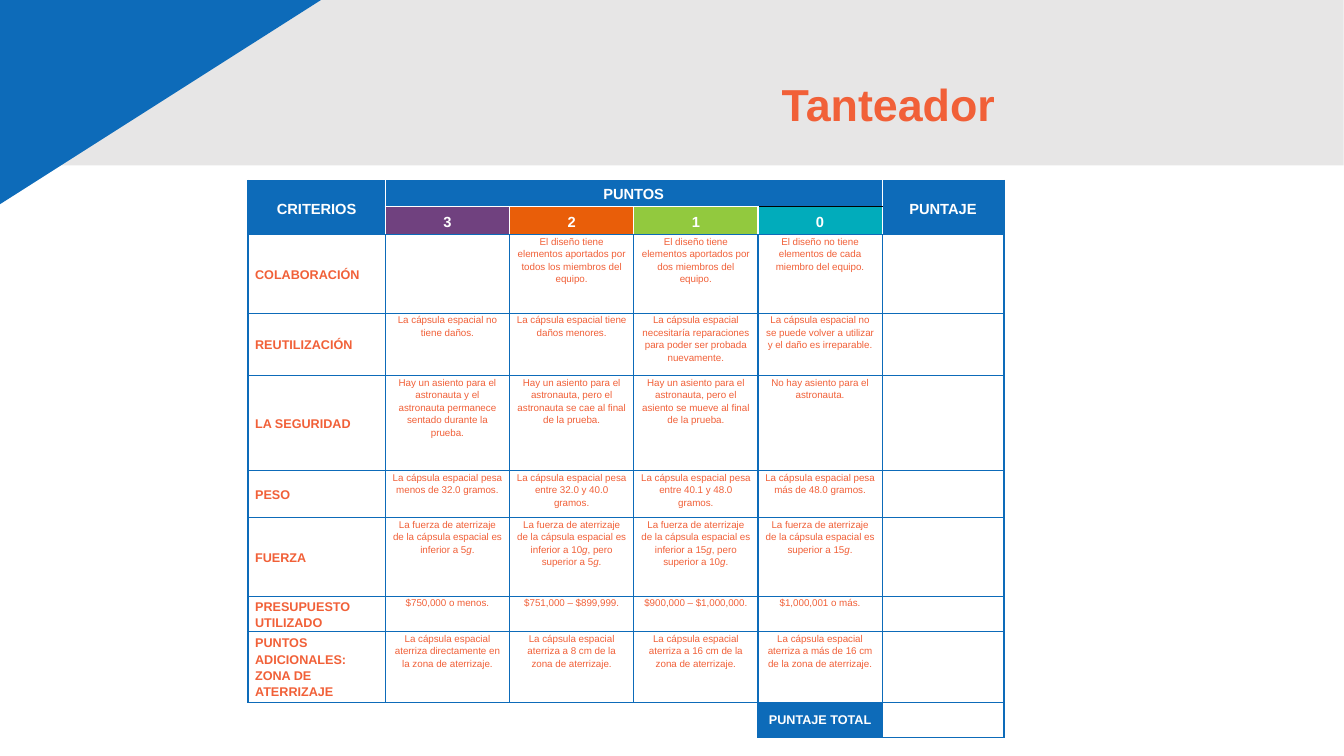
"""Build the scoring rubric slide."""
import lxml.etree
import pptx
import pptx.dml.color
import pptx.enum.shapes
import pptx.enum.text
import pptx.oxml
import pptx.oxml.ns
import pptx.util

Cm, Pt = pptx.util.Cm, pptx.util.Pt
RGB = pptx.dml.color.RGBColor
ALIGN = pptx.enum.text.PP_ALIGN
MIDDLE = pptx.enum.text.MSO_ANCHOR.MIDDLE
TOP = pptx.enum.text.MSO_ANCHOR.TOP
SHAPE = pptx.enum.shapes.MSO_SHAPE

BLUE = RGB(0x0D, 0x6B, 0xB9)
GREY = RGB(0xE7, 0xE6, 0xE6)
CORAL = RGB(0xF1, 0x60, 0x38)
WHITE = RGB(0xFF, 0xFF, 0xFF)
BLACK = RGB(0, 0, 0)
PURPLE = RGB(0x70, 0x41, 0x7F)
ORANGE = RGB(0xE9, 0x5E, 0x09)
GREEN = RGB(0x92, 0xC9, 0x3E)
TEAL = RGB(0x01, 0xAC, 0xBB)

POINTS = [("3", PURPLE), ("2", ORANGE), ("1", GREEN), ("0", TEAL)]
WIDTHS = [3.46, 3.13, 3.13, 3.13, 3.13, 3.07]
HEIGHTS = [0.66, 0.71, 1.98, 1.57, 2.39, 1.19, 1.98, 0.89, 1.78, 0.89]
FORCE = "La fuerza de aterrizaje de la cápsula espacial es "
RULES = [
    ("COLABORACIÓN",
     "",
     "El diseño tiene elementos aportados por todos los miembros del equipo.",
     "El diseño tiene elementos aportados por dos miembros del equipo.",
     "El diseño no tiene elementos de cada miembro del equipo."),
    ("REUTILIZACIÓN",
     "La cápsula espacial no tiene daños.",
     "La cápsula espacial tiene daños menores.",
     "La cápsula espacial necesitaría reparaciones para poder ser probada nuevamente.",
     "La cápsula espacial no se puede volver a utilizar y el daño es irreparable."),
    ("LA SEGURIDAD",
     "Hay un asiento para el astronauta y el astronauta permanece sentado durante la prueba.",
     "Hay un asiento para el astronauta, pero el astronauta se cae al final de la prueba.",
     "Hay un asiento para el astronauta, pero el asiento se mueve al final de la prueba.",
     "No hay asiento para el astronauta."),
    ("PESO",
     "La cápsula espacial pesa menos de 32.0 gramos.",
     "La cápsula espacial pesa entre 32.0 y 40.0 gramos.",
     "La cápsula espacial pesa entre 40.1 y 48.0 gramos.",
     "La cápsula espacial pesa más de 48.0 gramos."),
    ("FUERZA",
     FORCE + "inferior a 5*g*.",
     FORCE + "inferior a 10*g*, pero superior a 5*g*.",
     FORCE + "inferior a 15*g*, pero superior a 10*g*.",
     FORCE + "superior a 15*g*."),
    ("PRESUPUESTO\nUTILIZADO",
     "$750,000 o menos.",
     "$751,000 – $899,999.",
     "$900,000 – $1,000,000.",
     "$1,000,001 o más."),
    ("PUNTOS ADICIONALES: ZONA DE ATERRIZAJE",
     "La cápsula espacial aterriza directamente en la zona de aterrizaje.",
     "La cápsula espacial aterriza a 8 cm de la zona de aterrizaje.",
     "La cápsula espacial aterriza a 16 cm de la zona de aterrizaje.",
     "La cápsula espacial aterriza a más de 16 cm de la zona de aterrizaje."),
]


def write(frame, text, size, color, bold=True, align=ALIGN.CENTER, gap=0, lead=1.15):
    """Fill a text frame; parts between asterisks are italic."""
    frame.text = "\n".join("" for line in text.split("\n"))
    for para, line in zip(frame.paragraphs, text.split("\n")):
        para.alignment, para.line_spacing = align, lead
        for spot, part in enumerate(line.split("*")):
            run = para.add_run()
            run.text = part
            run.font.name, run.font.size = "Arial", Pt(size)
            run.font.bold, run.font.italic = bold, spot % 2 == 1
            run.font.color.rgb = color
    para.space_after = Pt(gap)


def edge(cell, left=BLUE, right=BLUE, top=BLUE, bottom=BLUE):
    """Draw the four borders of a cell; None hides one."""
    props = cell._tc.get_or_add_tcPr()
    sides = zip(("lnL", "lnR", "lnT", "lnB"), (left, right, top, bottom))
    for spot, (tag, color) in enumerate(sides):
        line = lxml.etree.Element(pptx.oxml.ns.qn("a:" + tag), w=str(Pt(1)))
        if color is None:
            lxml.etree.SubElement(line, pptx.oxml.ns.qn("a:noFill"))
        else:
            fill = lxml.etree.SubElement(line, pptx.oxml.ns.qn("a:solidFill"))
            lxml.etree.SubElement(fill, pptx.oxml.ns.qn("a:srgbClr"), val=str(color))
        props.insert(spot, line)


def block(slide, kind, box, color):
    """Place one plain filled shape."""
    shape = slide.shapes.add_shape(kind, *map(Cm, box))
    shape.shadow.inherit = False
    shape.fill.solid()
    shape.fill.fore_color.rgb = color
    shape.line.fill.background()
    return shape


def banner(slide, box):
    """Draw the grey band, the blue corner and the title."""
    x, y, wide, high = box
    block(slide, SHAPE.RECTANGLE, box, GREY)
    corner = block(slide, SHAPE.RIGHT_TRIANGLE, (x - 5.87, y - 3.89, 21.49, 13.67), BLUE)
    corner.rotation = 180
    corner._element.spPr.xfrm.set("flipH", "1")
    title = slide.shapes.add_textbox(Cm(x + 1.35), Cm(y + 1.34), Cm(24.64), Cm(3.68))
    frame = title.text_frame
    frame.word_wrap, frame.vertical_anchor = True, MIDDLE
    write(frame, "Tanteador", 32, CORAL, align=ALIGN.RIGHT, lead=0.9)


def clear(cell):
    """Strip a cell to tight margins, no fill and small empty text."""
    cell.margin_left = cell.margin_right = Cm(0.18)
    cell.margin_top = cell.margin_bottom = 0
    cell.fill.background()
    para = cell.text_frame.paragraphs[0]._p
    lxml.etree.SubElement(para, pptx.oxml.ns.qn("a:endParaRPr"), sz="700")


def head(cell, text, color=BLUE, size=10.5, lead=1.15):
    """Fill a header cell with white bold text."""
    cell.fill.solid()
    cell.fill.fore_color.rgb = color
    cell.vertical_anchor = MIDDLE
    write(cell.text_frame, text, size, WHITE, lead=lead)


def rubric(slide, box):
    """Build the scoring table in its box."""
    table = slide.shapes.add_table(len(HEIGHTS), len(WIDTHS), *map(Cm, box)).table
    table.first_row = table.horz_banding = False
    for col, wide in zip(table.columns, WIDTHS):
        col.width = Cm(wide * box[2] / sum(WIDTHS))
    for row, high in zip(table.rows, HEIGHTS):
        row.height = Cm(high * box[3] / sum(HEIGHTS))
    for cell in table.iter_cells():
        clear(cell)

    last = len(HEIGHTS) - 1
    spans = [((0, 0), (1, 0)), ((0, 1), (0, 4)), ((0, 5), (1, 5)), ((last, 0), (last, 3))]
    for start, end in spans:
        table.cell(*start).merge(table.cell(*end))
    head(table.cell(0, 0), "CRITERIOS")
    head(table.cell(0, 1), "PUNTOS")
    head(table.cell(0, 5), "PUNTAJE")
    for col, (mark, color) in enumerate(POINTS, 1):
        head(table.cell(1, col), mark, color)
    head(table.cell(last, 4), "PUNTAJE TOTAL", size=9, lead=1)

    for row, rule in enumerate(RULES, 2):
        label = table.cell(row, 0)
        label.vertical_anchor = MIDDLE
        write(label.text_frame, rule[0], 9, CORAL, align=ALIGN.LEFT, gap=6)
        for col, text in enumerate(rule[1:], 1):
            if text:
                cell = table.cell(row, col)
                cell.vertical_anchor = TOP
                write(cell.text_frame, text, 7, CORAL, bold=False, gap=2)

    for row in range(last + 1):
        for col in range(len(WIDTHS)):
            cell = table.cell(row, col)
            if row < 2:
                edge(cell,
                     left=WHITE if col else BLUE,
                     right=WHITE if col < 5 else BLUE,
                     top=BLUE if row == 0 or col in (0, 5) else BLACK if col == 4 else WHITE,
                     bottom=WHITE if row == 0 and 0 < col < 5 else BLUE)
            elif row == last and col < 4:
                edge(cell, left=None, right=BLUE if col in (0, 3) else None, bottom=None)
            else:
                edge(cell)


def main():
    """Make the deck and save it."""
    deck = pptx.Presentation()
    deck.slide_width, deck.slide_height = Cm(33.87), Cm(19.05)
    slide = deck.slides.add_slide(deck.slide_layouts[6])
    banner(slide, (-0.66, -0.48, 34.52, 4.65))
    rubric(slide, (6.25, 4.55, 19.05, 14.04))
    deck.save("out.pptx")


if __name__ == "__main__":
    main()
